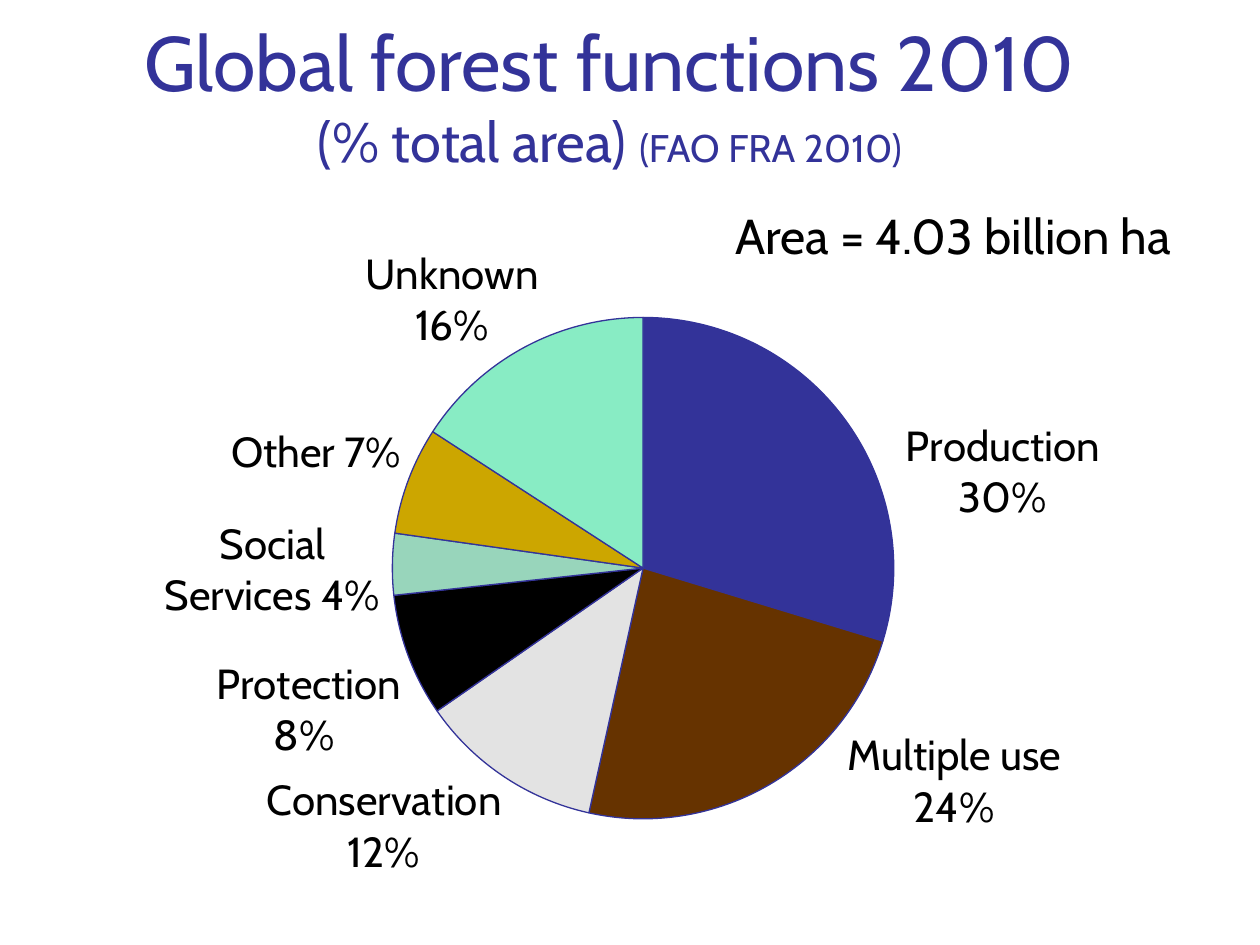
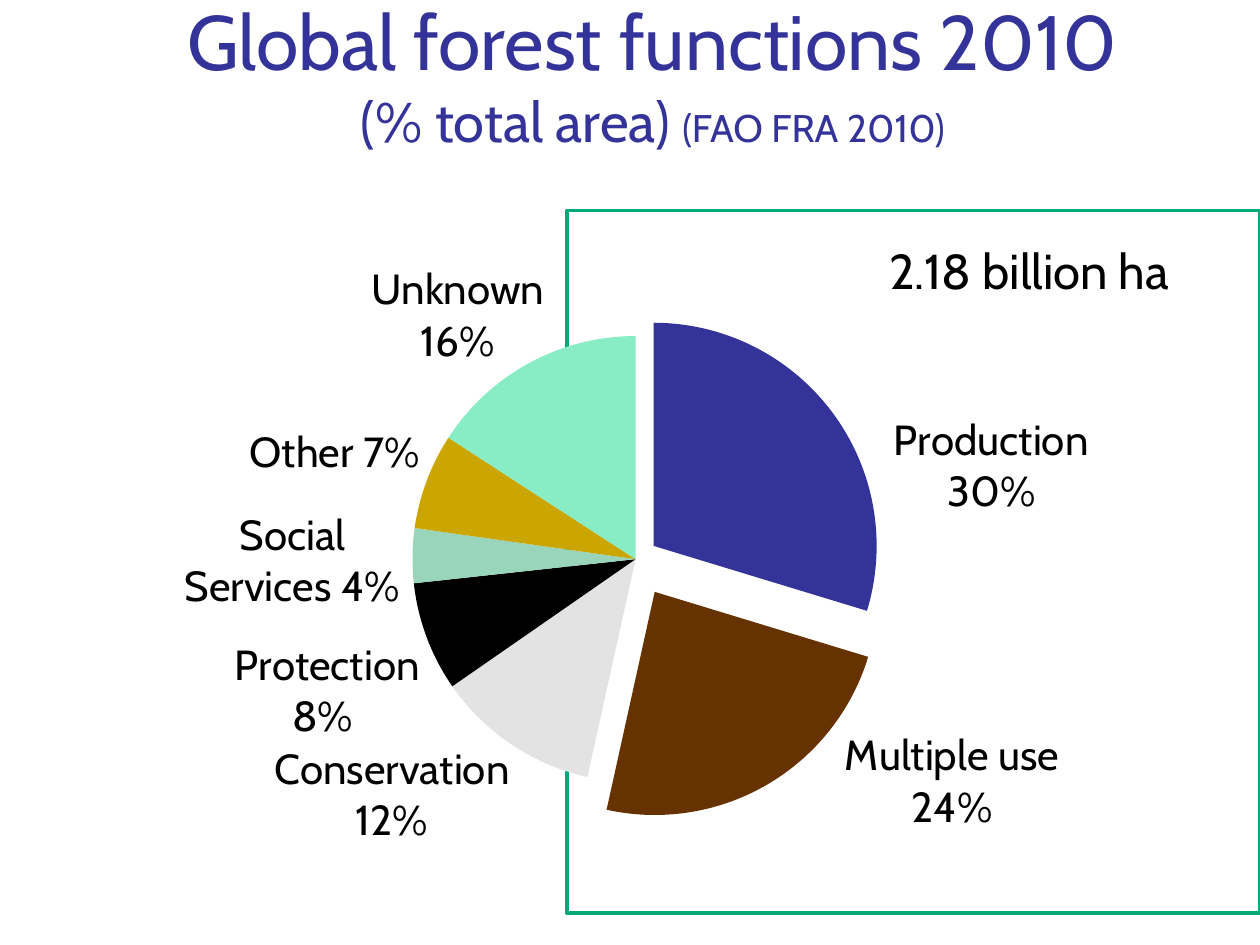
from lxml import etree
from pptx import Presentation
from pptx.chart.data import CategoryChartData
from pptx.dml.color import RGBColor
from pptx.enum import chart as charts, shapes, text
from pptx.oxml.ns import qn
from pptx.util import Cm, Pt

FONT = "Cabin"
NAVY, BLACK, WHITE, GREEN = "333399", "000000", "FFFFFF", "00A97C"

# Category, share, slice colour, label, label shift as a fraction of the chart
functions = [
    ("Production", 30, NAVY, "Production 30%", (0.044, 0.152)),
    ("Multiple use", 24, "663300", "Multiple use 24%", (0.059, -0.085)),
    ("Conservation", 12, "E3E3E3", "Conservation 12%", (0.002, -0.01)),
    ("Protection", 8, BLACK, "Protection 8% ", None),
    ("Social Services", 4, "98D5BB", "Social Services 4%", (-0.004, 0.008)),
    ("Other", 7, "CCA600", "Other 7%", None),
    ("Unknown", 16, "88ECC4", "Unknown 16%", (0.015, 0.014)),
]
title_runs = [("Global forest functions 2010", 44), ("(% total area) ", 32), ("(FAO FRA 2010)", 22)]

# What differs: title corner, area note and its box, plot area, exploded slices
views = [
    dict(title=(1.47, -0.43), note="Area = 4.03 billion ha", note_box=(14.58, 4.01, 10.06, 1.45),
         plot=(0.321, 0.15, 0.4, 0.702), explosion={}, outlined=True, framed=False),
    dict(title=(2.34, -0.84), note="2.18 billion ha", note_box=(17.68, 4.72, 6.71, 1.45),
         plot=(0.337, 0.176, 0.356, 0.625), explosion={0: 10, 1: 17}, outlined=False, framed=True),
]


def style(font, size, color):
    font.name, font.size = FONT, Pt(size)
    font.color.rgb = RGBColor.from_string(color)


def manual_layout(**settings):
    layout = etree.Element(qn("c:layout"))
    manual = etree.SubElement(layout, qn("c:manualLayout"))
    for tag, value in settings.items():
        etree.SubElement(manual, qn("c:" + tag)).set("val", str(value))
    return layout


prs = Presentation()
prs.slide_width, prs.slide_height = Cm(25.4), Cm(19.05)

for view in views:
    slide = prs.slides.add_slide(prs.slide_layouts[5])

    # Title
    title = slide.shapes.title
    title.left, title.top = map(Cm, view["title"])
    title.width, title.height = Cm(21.64), Cm(4.06)
    title.text_frame.auto_size = text.MSO_AUTO_SIZE.NONE
    title.text_frame.vertical_anchor = text.MSO_ANCHOR.BOTTOM
    heading = title.text_frame.paragraphs[0]
    heading.alignment = text.PP_ALIGN.CENTER
    for i, (words, size) in enumerate(title_runs):
        if i == 1:
            heading.add_line_break()
        run = heading.add_run()
        run.text = words
        style(run.font, size, NAVY)

    # Frame behind the productive share
    if view["framed"]:
        frame = slide.shapes.add_shape(shapes.MSO_SHAPE.RECTANGLE, Cm(11.43), Cm(4.24), Cm(13.97), Cm(14.17))
        frame.shadow.inherit = False
        frame.fill.solid()
        frame.fill.fore_color.rgb = RGBColor.from_string(WHITE)
        frame.line.color.rgb = RGBColor.from_string(GREEN)
        frame.line.width = Pt(2)

    # Pie of forest functions
    data = CategoryChartData()
    data.categories = [function[0] for function in functions]
    data.add_series("Series 1", [function[1] for function in functions])
    pie = slide.shapes.add_chart(charts.XL_CHART_TYPE.PIE, Cm(-0.2), Cm(4.24), Cm(25.27), Cm(14.4), data).chart
    pie.has_legend = pie.has_title = False
    style(pie.font, 18, BLACK)
    plot = pie.plots[0]
    plot.vary_by_categories = True
    series = plot.series[0]
    labels = series.data_labels
    labels.show_value = labels.show_category_name = True
    labels.position = charts.XL_LABEL_POSITION.OUTSIDE_END
    style(labels.font, 24, BLACK)

    # Slices and their labels
    for i, (_, _, color, words, shift) in enumerate(functions):
        point = series.points[i]
        point.format.fill.solid()
        point.format.fill.fore_color.rgb = RGBColor.from_string(color)
        if view["outlined"]:
            point.format.line.color.rgb = RGBColor.from_string(NAVY)
            point.format.line.width = Pt(0.75)
        else:
            point.format.line.fill.background()
        if i in view["explosion"]:
            explosion = etree.Element(qn("c:explosion"))
            explosion.set("val", str(view["explosion"][i]))
            slice_xml = series._element.xpath(f"c:dPt[c:idx/@val='{i}']")[0]
            slice_xml.find(qn("c:spPr")).addprevious(explosion)
        label = point.data_label
        label.text_frame.text = words
        label.text_frame.word_wrap = True
        style(label.text_frame.paragraphs[0].runs[0].font, 24, BLACK)
        label.position = charts.XL_LABEL_POSITION.OUTSIDE_END
        if shift:
            index = series._element.xpath(f"c:dLbls/c:dLbl/c:idx[@val='{i}']")[0]
            index.addnext(manual_layout(x=shift[0], y=shift[1]))

    # No leader lines to the shifted labels
    labels_xml = series._element.find(qn("c:dLbls"))
    leader = labels_xml.find(qn("c:showLeaderLines"))
    if leader is None:
        leader = etree.SubElement(labels_xml, qn("c:showLeaderLines"))
    leader.set("val", "0")

    # Plot area
    x, y, w, h = view["plot"]
    plot_area = plot._element.getparent()
    for automatic in plot_area.findall(qn("c:layout")):
        plot_area.remove(automatic)
    plot_area.insert(0, manual_layout(layoutTarget="inner", xMode="edge", yMode="edge", x=x, y=y, w=w, h=h))

    # Area note
    note = slide.shapes.add_textbox(*map(Cm, view["note_box"])).text_frame
    note.word_wrap = False
    note.auto_size = text.MSO_AUTO_SIZE.SHAPE_TO_FIT_TEXT
    note.text = view["note"]
    style(note.paragraphs[0].runs[0].font, 28, BLACK)

prs.save("out.pptx")
